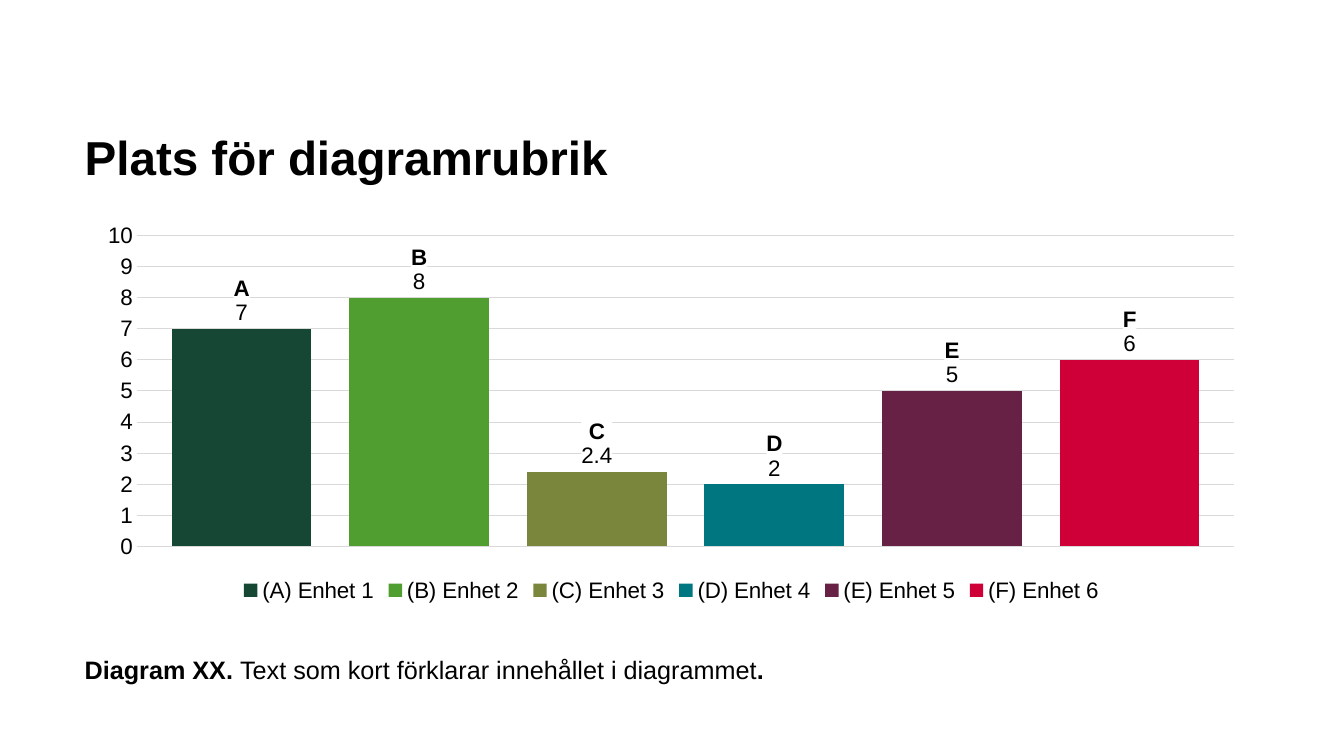
import pptx
import pptx.chart.data
import pptx.dml.color
import pptx.enum.chart
import pptx.enum.text
import pptx.oxml
import pptx.oxml.ns
import pptx.util

Pt = pptx.util.Pt
COLORS = {
    "text": "000000", "grid": "D9D9D9", "label": "FFFFFF",
    "A": "154734", "B": "509E2F", "C": "79863B",
    "D": "007681", "E": "672145", "F": "CE0037",
}
VALUES = {"A": 7, "B": 8, "C": 2.4, "D": 2, "E": 5, "F": 6}
LEFT, WIDTH = 60.5, 838


def rgb(name):
    return pptx.dml.color.RGBColor.from_string(COLORS[name])


class SlideBuilder:
    def __init__(self, prs):
        self.font_name = "Arial"
        self.slide = prs.slides.add_slide(prs.slide_layouts[5])

    def style(self, font, size, bold=None):
        font.name, font.size, font.bold = self.font_name, Pt(size), bold
        font.color.rgb = rgb("text")

    def frame(self, sp, top, height, anchor):
        sp.left, sp.top, sp.width, sp.height = Pt(LEFT), Pt(top), Pt(WIDTH), Pt(height)
        tf = sp.text_frame
        tf.margin_left = tf.margin_top = tf.margin_right = tf.margin_bottom = 0
        tf.word_wrap = True
        tf.auto_size = pptx.enum.text.MSO_AUTO_SIZE.NONE
        tf.vertical_anchor = anchor
        p = tf.paragraphs[0]
        p.alignment = pptx.enum.text.PP_ALIGN.LEFT
        return p

    def title(self, text, top, height):
        p = self.frame(self.slide.shapes.title, top, height, pptx.enum.text.MSO_ANCHOR.BOTTOM)
        p.text = text
        p.line_spacing = Pt(36)
        self.style(p.font, 34, True)

    def caption(self, runs, top, height):
        sp = self.slide.shapes.add_textbox(0, 0, Pt(WIDTH), Pt(height))
        p = self.frame(sp, top, height, pptx.enum.text.MSO_ANCHOR.MIDDLE)
        for text, bold in runs:
            r = p.add_run()
            r.text = text
            self.style(r.font, 18, bold)

    def label(self, series, letter, value):
        """Put the bold letter above the value, on a white ground."""
        label = series.points[0].data_label
        tf = label.text_frame
        tf.text = f"{letter}\n{value}"
        for p, bold in zip(tf.paragraphs, (True, False)):
            self.style(p.font, 16, bold)
            self.style(p.runs[0].font, 16, bold)
        label.position = pptx.enum.chart.XL_LABEL_POSITION.OUTSIDE_END
        tx = series._element.xpath(".//c:dLbl/c:tx")[0]
        tx.addnext(pptx.oxml.parse_xml(
            f'<c:spPr {pptx.oxml.ns.nsdecls("c", "a")}><a:solidFill>'
            f'<a:srgbClr val="{COLORS["label"]}"/></a:solidFill></c:spPr>'))

    def column_chart(self, values, top, height):
        data = pptx.chart.data.CategoryChartData()
        data.categories = ["1"]
        for number, (letter, value) in enumerate(values.items(), 1):
            data.add_series(f"({letter}) Enhet {number}", [value])
        chart = self.slide.shapes.add_chart(
            pptx.enum.chart.XL_CHART_TYPE.COLUMN_CLUSTERED,
            Pt(LEFT), Pt(top), Pt(WIDTH), Pt(height), data).chart
        self.style(chart.font, 16)
        chart.has_title = False

        # Legend
        chart.has_legend = True
        chart.legend.position = pptx.enum.chart.XL_LEGEND_POSITION.BOTTOM
        chart.legend.include_in_layout = False
        self.style(chart.legend.font, 16)

        # Axes
        chart.category_axis.visible = False
        axis = chart.value_axis
        axis.minimum_scale, axis.maximum_scale, axis.major_unit = 0, 10, 1
        axis.major_tick_mark = pptx.enum.chart.XL_TICK_MARK.NONE
        axis.format.line.fill.background()
        self.style(axis.tick_labels.font, 16)
        grid = axis.major_gridlines.format.line
        grid.color.rgb = rgb("grid")
        grid.width = Pt(0.75)

        # Columns
        plot = chart.plots[0]
        plot.gap_width, plot.overlap = 50, -27
        plot.vary_by_categories = False
        for series, (letter, value) in zip(plot.series, values.items()):
            series.format.fill.solid()
            series.format.fill.fore_color.rgb = rgb(letter)
            self.label(series, letter, value)


def main():
    prs = pptx.Presentation()
    prs.slide_width, prs.slide_height = Pt(960), Pt(540)
    builder = SlideBuilder(prs)
    builder.title("Plats för diagramrubrik", 96.5, 36)
    builder.column_chart(VALUES, 154, 279.5)
    builder.caption([("Diagram XX. ", True),
                     ("Text som kort förklarar innehållet i diagrammet", False),
                     (".", True)], 456, 44.5)
    prs.save("out.pptx")


if __name__ == "__main__":
    main()
